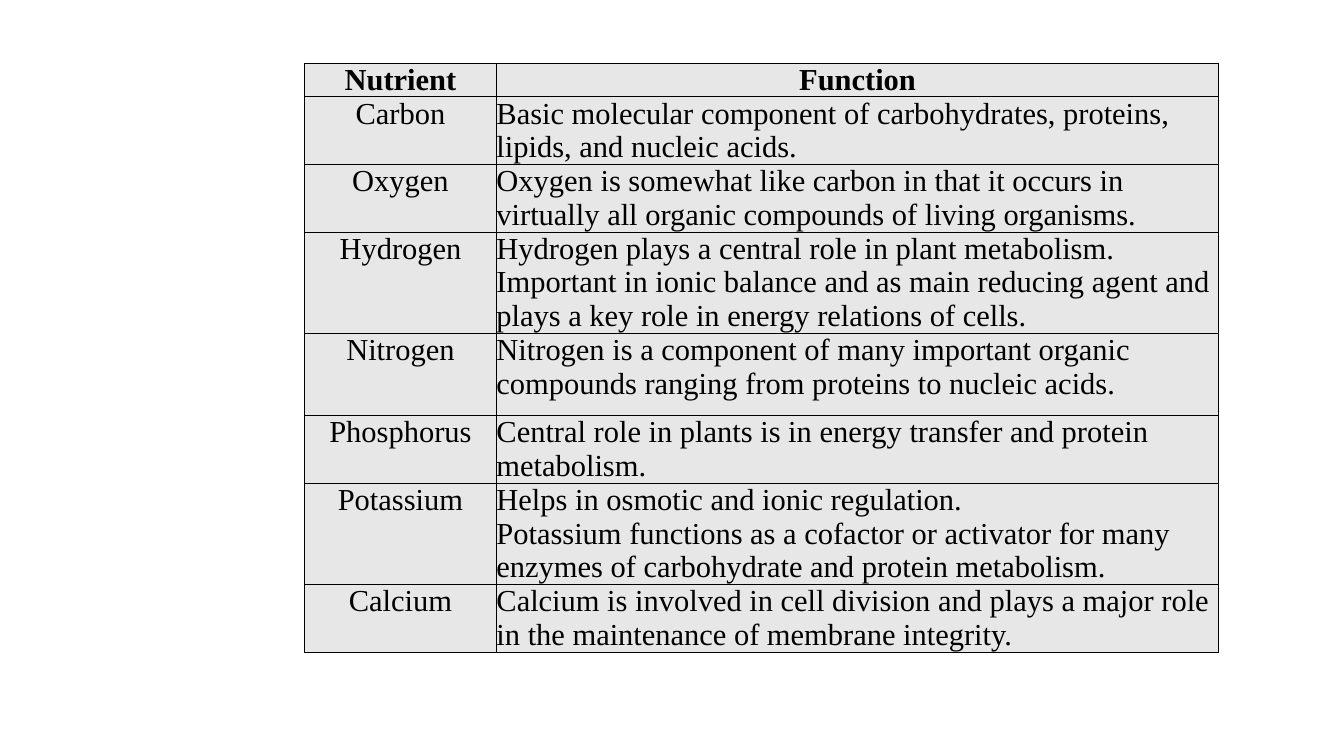
import pptx
import pptx.dml.color
import pptx.enum.text
import pptx.oxml
import pptx.oxml.ns
import pptx.util
from dataclasses import dataclass

HEADER = ("Nutrient", "Function")

# nutrient, paragraphs on its function, row height in text lines
NUTRIENTS = [
    ("Carbon", ["Basic molecular component of carbohydrates, proteins, lipids, and nucleic acids."], 2),
    ("Oxygen", ["Oxygen is somewhat like carbon in that it occurs in virtually all organic "
                "compounds of living organisms."], 2),
    ("Hydrogen", ["Hydrogen plays a central role in plant metabolism. Important in ionic balance "
                  "and as main reducing agent and plays a key role in energy relations of cells."], 3),
    ("Nitrogen", ["Nitrogen is a component of many important organic compounds ranging from "
                  "proteins to nucleic acids."], 2.43),
    ("Phosphorus", ["Central role in plants is in energy transfer and protein metabolism."], 2),
    ("Potassium", ["Helps in osmotic and ionic regulation.",
                   "Potassium functions as a cofactor or activator for many enzymes of "
                   "carbohydrate and protein metabolism."], 3),
    ("Calcium", ["Calcium is involved in cell division and plays a major role in the "
                 "maintenance of membrane integrity."], 2),
]


@dataclass(frozen=True)
class Theme:
    font: str = "Times New Roman"
    size: int = 24
    ink: str = "000000"
    fill: str = "E7E7E7"
    border: int = 1


THEME = Theme()
SLIDE_W, SLIDE_H = 14.7, 8.27
LEFT, TOP, TABLE_W = 3.33, 0.69, 10
COLUMN_SHARES = (0.21, 0.79)
LINE_H = 0.37


def rgb(value):
    return pptx.dml.color.RGBColor.from_string(value)


def add_borders(cell):
    """Rule all four sides; borders must precede the fill in the cell properties."""
    props = cell._tc.get_or_add_tcPr()
    for i, side in enumerate(("lnL", "lnR", "lnT", "lnB")):
        props.insert(i, pptx.oxml.parse_xml(
            f'<a:{side} {pptx.oxml.ns.nsdecls("a")} w="{pptx.util.Pt(THEME.border)}">'
            f'<a:solidFill><a:srgbClr val="{THEME.ink}"/></a:solidFill></a:{side}>'))


def fill_cell(cell, paragraphs, centred, header):
    cell.margin_left = cell.margin_right = cell.margin_top = cell.margin_bottom = 0
    anchors = pptx.enum.text.MSO_ANCHOR
    cell.vertical_anchor = anchors.MIDDLE if header else anchors.TOP
    cell.fill.solid()
    cell.fill.fore_color.rgb = rgb(THEME.fill)
    add_borders(cell)
    tf = cell.text_frame
    aligns = pptx.enum.text.PP_ALIGN
    for i, text in enumerate(paragraphs):
        p = tf.add_paragraph() if i else tf.paragraphs[0]
        p.alignment = aligns.CENTER if centred else aligns.LEFT
        r = p.add_run()
        r.text = text
        r.font.name = THEME.font
        r.font.size = pptx.util.Pt(THEME.size)
        r.font.bold = header
        r.font.color.rgb = rgb(THEME.ink)


def main():
    inches = pptx.util.Inches
    prs = pptx.Presentation()
    prs.slide_width, prs.slide_height = inches(SLIDE_W), inches(SLIDE_H)
    s = prs.slides.add_slide(prs.slide_layouts[6])

    rows = [(HEADER[0], [HEADER[1]], 1)] + NUTRIENTS
    table_h = LINE_H * sum(lines for _, _, lines in rows)
    table = s.shapes.add_table(len(rows), len(HEADER), inches(LEFT), inches(TOP),
                               inches(TABLE_W), inches(table_h)).table
    table.horz_banding = False
    for column, share in zip(table.columns, COLUMN_SHARES):
        column.width = inches(TABLE_W * share)
    for i, (nutrient, function, lines) in enumerate(rows):
        header = i == 0
        table.rows[i].height = inches(LINE_H * lines)
        fill_cell(table.cell(i, 0), [nutrient], True, header)
        fill_cell(table.cell(i, 1), function, header, header)
    prs.save("out.pptx")


if __name__ == "__main__":
    main()
